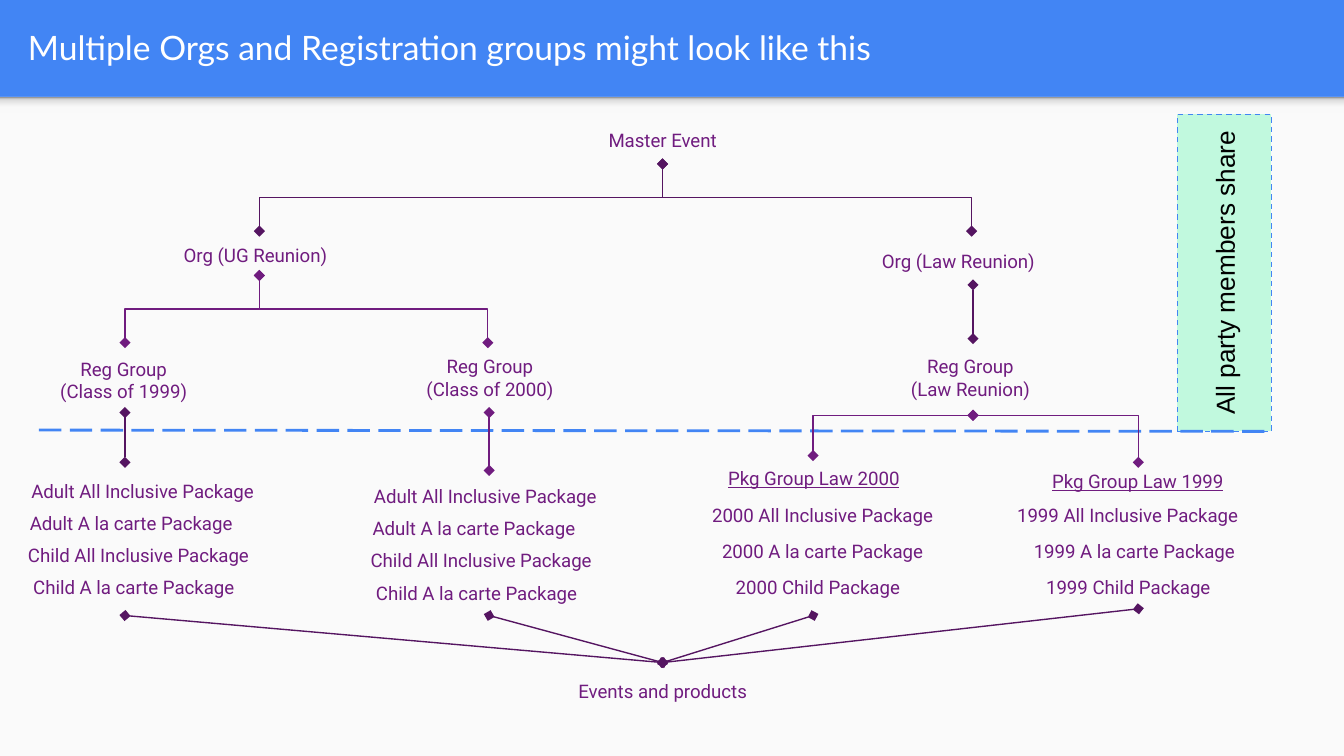
"""Build the slide that shows how organisations and registration groups nest under one event."""
from copy import deepcopy

from lxml import etree
from pptx import Presentation
from pptx.dml.color import RGBColor
from pptx.enum.dml import MSO_LINE
from pptx.enum.shapes import MSO_CONNECTOR, MSO_SHAPE
from pptx.enum.text import MSO_ANCHOR, PP_ALIGN
from pptx.oxml.ns import qn
from pptx.util import Inches, Pt

RECTANGLE, PROCESS = MSO_SHAPE.RECTANGLE, MSO_SHAPE.FLOWCHART_PROCESS
STRAIGHT, ELBOW = MSO_CONNECTOR.STRAIGHT, MSO_CONNECTOR.ELBOW
LEFT, CENTER, MIDDLE = PP_ALIGN.LEFT, PP_ALIGN.CENTER, MSO_ANCHOR.MIDDLE
DASH, LONG_DASH = MSO_LINE.DASH, MSO_LINE.LONG_DASH

BLUE = RGBColor(0x42, 0x85, 0xF4)
PAPER = RGBColor(0xFA, 0xFA, 0xFA)
PURPLE = RGBColor(0x70, 0x1C, 0x7F)
DARK_PURPLE = RGBColor(0x55, 0x15, 0x61)
MINT = RGBColor(0xC1, 0xF9, 0xDE)
WHITE = RGBColor(0xFF, 0xFF, 0xFF)
BLACK = RGBColor(0, 0, 0)
PALE = RGBColor(0xF9, 0xF9, 0xF9)
SILVER = RGBColor(0xDE, 0xDE, 0xDE)
GRAY = RGBColor(0x99, 0x99, 0x99)


def write(shape, text, font="Roboto", size=10, color=PURPLE, align=CENTER, underline=None):
    frame = shape.text_frame
    frame.word_wrap = True
    frame.vertical_anchor = MIDDLE
    frame.margin_left = frame.margin_right = Inches(0.1)
    frame.margin_top = frame.margin_bottom = Inches(0.1)
    paragraph = frame.paragraphs[0]
    paragraph.alignment = align
    run = paragraph.add_run()
    run.text = text
    run.font.name, run.font.size = font, Pt(size)
    run.font.color.rgb, run.font.underline = color, underline


class Diagram:
    def __init__(self, slide):
        self.shapes = slide.shapes

    def label(self, text, left, top, width, height=0.28, **style):
        box = self.shapes.add_textbox(*map(Inches, (left, top, width, height)))
        write(box, text, **style)
        return box

    def block(self, left, top, width, height, fill, kind=RECTANGLE):
        block = self.shapes.add_shape(kind, *map(Inches, (left, top, width, height)))
        block.shadow.inherit = False
        block.fill.solid()
        block.fill.fore_color.rgb = fill
        block.line.fill.background()
        return block

    def fade(self, left, top, width, height, stops):
        strip = self.block(left, top, width, height, PAPER)
        strip.fill.gradient()
        strip.fill.gradient_angle = 90
        stop_list = strip.element.spPr.find(".//" + qn("a:gsLst"))
        for _ in stops[2:]:
            stop_list.append(deepcopy(stop_list[0]))
        for stop, (position, color) in zip(strip.fill.gradient_stops, stops):
            stop.position, stop.color.rgb = position, color

    def connect(self, start, end, color=DARK_PURPLE, kind=STRAIGHT, width=0.75, dash=None):
        link = self.shapes.add_connector(kind, *map(Inches, (*start, *end)))
        link.line.color.rgb, link.line.width = color, Pt(width)
        properties = link.element.spPr
        if dash:
            link.line.dash_style = dash
        else:
            for tip in ("a:headEnd", "a:tailEnd"):
                etree.SubElement(properties.find(qn("a:ln")), qn(tip), type="diamond")
        etree.SubElement(properties, qn("a:effectLst"))
        return link

    def branch(self, parent, child, color):
        (x1, y1), (x2, y2) = parent, child
        middle_x, middle_y = (x1 + x2) / 2, (y1 + y2) / 2
        rightward = x2 > x1
        half_drop = (y2 - y1) / 2 * (-1 if rightward else 1)
        half_span = abs(x2 - x1) / 2
        link = self.connect((middle_x - half_drop, middle_y - half_span),
                            (middle_x + half_drop, middle_y + half_span), color, ELBOW)
        link.element.spPr.find(qn("a:xfrm")).set("rot", "16200000" if rightward else "5400000")

    def corner(self, parent, child, color):
        link = self.connect(parent, child, color, ELBOW)
        link.element.spPr.find(qn("a:prstGeom")).set("prst", "bentConnector2")


def main():
    deck = Presentation()
    deck.slide_width = Inches(10)
    deck.slide_height = deck.slide_width * 9 // 16
    slide = deck.slides.add_slide(deck.slide_layouts[6])
    slide.background.fill.solid()
    slide.background.fill.fore_color.rgb = BLUE
    diagram = Diagram(slide)

    diagram.block(0, 0.72, 10, 4.91, PAPER)
    diagram.fade(0, 0.72, 10, 0.12, [(0, PALE), (0.36, PALE), (0.8, SILVER), (1, GRAY)])
    diagram.label("Multiple Orgs and Registration groups might look like this",
                  0.11, 0.02, 9.65, 0.66, font="Lato", size=18, color=WHITE, align=LEFT)

    for text, left, top, width, height in (
        ("Master Event", 4.09, 0.72, 1.68, 0.64),
        ("Org (UG Reunion)", 1.06, 1.68, 1.68, 0.44),
        ("Org (Law Reunion)", 6.29, 1.72, 1.68, 0.44),
        ("Reg Group (Class of 1999)", 0.3, 2.51, 1.24, 0.64),
        ("Reg Group (Class of 2000)", 3.07, 2.49, 1.15, 0.64),
        ("Reg Group (Law Reunion)", 6.65, 2.49, 1.14, 0.64),
    ):
        diagram.label(text, left, top, width, height)

    for shift_x, shift_y in ((0, 0), (2.55, 0.04)):
        for row, (text, left, width, align) in enumerate((
            ("Adult All Inclusive Package", 0.05, 2.02, CENTER),
            ("Adult A la carte Package", 0.09, 1.77, CENTER),
            ("Child All Inclusive Package", 0.11, 2.06, LEFT),
            ("Child A la carte Package", 0.11, 1.77, CENTER),
        )):
            diagram.label(text, left + shift_x, 3.51 + shift_y + 0.24 * row, width, align=align)

    for year, top, lefts in (("2000", 3.42, (5.13, 5.09, 5.09, 5.2)),
                             ("1999", 3.44, (7.54, 7.36, 7.41, 7.51))):
        diagram.label(f"Pkg Group Law {year}", lefts[0], top, 1.85, underline=True)
        for row, (package, width) in enumerate((("All Inclusive", 2.06),
                                                ("A la carte", 2.06), ("Child", 1.77))):
            diagram.label(f"{year} {package} Package", lefts[row + 1], 3.69 + 0.27 * row, width)

    shared = diagram.block(7.93, 1.68, 2.36, 0.7, MINT, PROCESS)
    shared.rotation = 270
    shared.line.color.rgb, shared.line.width = BLUE, Pt(0.75)
    shared.line.dash_style = DASH
    write(shared, "All party members share", font="Arial", size=14, color=BLACK)
    diagram.connect((0.29, 3.2), (9.46, 3.21), BLUE, width=1.5, dash=LONG_DASH)

    for org_x in (1.93, 7.23):
        diagram.branch((4.93, 1.22), (org_x, 1.72), DARK_PURPLE)
    for group_x in (0.93, 3.63):
        diagram.branch((1.93, 2.05), (group_x, 2.55), PURPLE)
    for package_top in ((6.05, 3.39), (8.47, 3.44)):
        diagram.corner((7.24, 3.09), package_top, PURPLE)
    diagram.connect((7.24, 2.12), (7.24, 2.52))
    diagram.connect((0.93, 3.07), (0.93, 3.44))
    diagram.connect((3.64, 3.07), (3.64, 3.5), PURPLE)

    events = diagram.label("Events and products", 4.14, 4.93, 1.58, 0.43)
    for package_bottom in ((0.93, 4.58), (3.64, 4.58), (6.05, 4.58), (8.47, 4.53)):
        diagram.connect(package_bottom, (4.93, 4.93)).end_connect(events, 0)

    deck.save("out.pptx")


if __name__ == "__main__":
    main()
